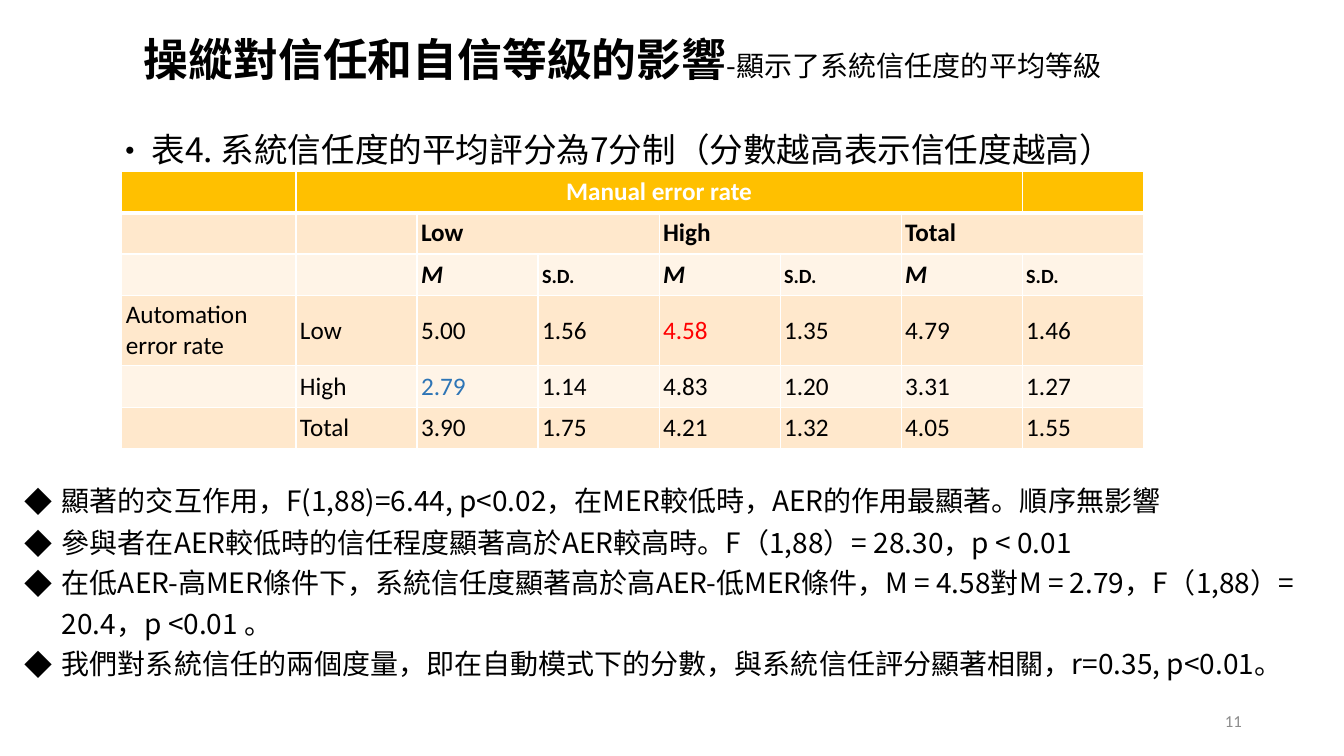
from lxml import etree
from pptx import Presentation
from pptx.dml.color import RGBColor
from pptx.enum.text import MSO_ANCHOR, MSO_AUTO_SIZE, PP_ALIGN
from pptx.oxml.ns import qn
from pptx.util import Cm, Pt

MIDDLE, BOTTOM = MSO_ANCHOR.MIDDLE, MSO_ANCHOR.BOTTOM
LEFT, CENTER, RIGHT = PP_ALIGN.LEFT, PP_ALIGN.CENTER, PP_ALIGN.RIGHT
NO_AUTOFIT = MSO_AUTO_SIZE.NONE

CJK_FONT, TABLE_FONT = "Noto Sans CJK SC", "Calibri"
COLORS = {
    "text": "000000", "white": "FFFFFF", "header": "FFC000",
    "band_dark": "FFE8CC", "band_light": "FFF4E7",
    "highest": "FF0000", "lowest": "2E75B6", "number": "8C8C8C",
}

TITLE = "操縱對信任和自信等級的影響"
TITLE_DETAIL = "-顯示了系統信任度的平均等級"
CAPTION = "表4. 系統信任度的平均評分為7分制（分數越高表示信任度越高）"
PAGE_NUMBER = "11"
FINDINGS = [  # text, line spacing
    ("顯著的交互作用，F(1,88)=6.44, p<0.02，在MER較低時，AER的作用最顯著。順序無影響", 1.2),
    ("參與者在AER較低時的信任程度顯著高於AER較高時。F（1,88）= 28.30，p < 0.01", 1.25),
    ("在低AER-高MER條件下，系統信任度顯著高於高AER-低MER條件，"
     "M = 4.58對M = 2.79，F（1,88）= 20.4，p <0.01 。", 1.2),
    ("我們對系統信任的兩個度量，即在自動模式下的分數，與系統信任評分顯著相關，r=0.35, p<0.01。", 1.2),
]
RATINGS = [
    ["", "Manual error rate", "", "", "", "", "", ""],
    ["", "", "Low", "", "High", "", "Total", ""],
    ["", "", "M", "s.d.", "M", "s.d.", "M", "s.d."],
    ["Automation error rate", "Low", "5.00", "1.56", "4.58", "1.35", "4.79", "1.46"],
    ["", "High", "2.79", "1.14", "4.83", "1.20", "3.31", "1.27"],
    ["", "Total", "3.90", "1.75", "4.21", "1.32", "4.05", "1.55"],
]
MERGES = [(0, 1, 6), (1, 2, 3), (1, 4, 5), (1, 6, 7)]  # row, first column, last column
HIGHLIGHTS = {"4.58": "highest", "2.79": "lowest"}
HEADING_ROWS = 3

COLUMN_WIDTHS = [Cm(4.39)] + [Cm(3.05)] * 7
ROW_HEIGHTS = [Cm(1.04)] * 3 + [Cm(1.78)] + [Cm(1.04)] * 2
CELL_MARGIN = Cm(0.1)
BULLET_INDENT = Cm(0.95)


def add_run(paragraph, text, size, font=CJK_FONT, color="text", bold=False):
    run = paragraph.add_run()
    run.text = text
    run.font.size = Pt(size)
    run.font.bold = bold
    run.font.name = font
    run.font.color.rgb = RGBColor.from_string(COLORS[color])
    etree.SubElement(run.font._element, qn("a:ea"), typeface=font)
    return run


def add_text_frame(left, top, width, height):
    frame = slide.shapes.add_textbox(Cm(left), Cm(top), Cm(width), Cm(height)).text_frame
    frame.word_wrap = True
    return frame


def set_bullet(paragraph, symbol):
    properties = paragraph._p.get_or_add_pPr()
    properties.set("marL", str(BULLET_INDENT))
    properties.set("indent", str(-BULLET_INDENT))
    etree.SubElement(properties, qn("a:buFont"), typeface=CJK_FONT)
    etree.SubElement(properties, qn("a:buChar"), char=symbol)


def set_borders(cell, bottom_width):
    properties = cell._tc.get_or_add_tcPr()
    for side, width in (("L", 1), ("R", 1), ("T", 1), ("B", bottom_width)):
        line = etree.SubElement(properties, qn(f"a:ln{side}"), w=str(Pt(width)))
        fill = etree.SubElement(line, qn("a:solidFill"))
        etree.SubElement(fill, qn("a:srgbClr"), val=COLORS["white"])


def format_cell(cell, row, text):
    is_header = row == 0
    set_borders(cell, 3 if is_header else 1)
    band = "header" if is_header else "band_dark" if row % 2 else "band_light"
    cell.fill.solid()
    cell.fill.fore_color.rgb = RGBColor.from_string(COLORS[band])
    cell.margin_left = cell.margin_right = CELL_MARGIN
    cell.margin_top = cell.margin_bottom = CELL_MARGIN
    cell.vertical_anchor = MIDDLE
    if not text:
        return
    paragraph = cell.text_frame.paragraphs[0]
    paragraph.alignment = CENTER if is_header else LEFT
    color = "white" if is_header else HIGHLIGHTS.get(text, "text")
    run = add_run(paragraph, text, 18, TABLE_FONT, color, bold=row < HEADING_ROWS)
    if text == "M":
        run.font.italic = True
    elif text == "s.d.":
        run.font._element.set("cap", "small")


presentation = Presentation()
presentation.slide_width, presentation.slide_height = Cm(33.87), Cm(19.05)
slide = presentation.slides.add_slide(presentation.slide_layouts[5])

title = slide.shapes.title
title.left, title.top, title.width, title.height = Cm(0.69), Cm(0.56), Cm(30), Cm(1.75)
title.text_frame.auto_size = NO_AUTOFIT
title.text_frame.vertical_anchor = BOTTOM
heading = title.text_frame.paragraphs[0]
heading.alignment = CENTER
heading.line_spacing = 0.9
add_run(heading, TITLE, 32, bold=True)
add_run(heading, TITLE_DETAIL, 20)

caption = add_text_frame(2.62, 2.92, 30.61, 1.4).paragraphs[0]
caption.line_spacing = 1.2
caption.space_before = Pt(10)
set_bullet(caption, "•")
add_run(caption, CAPTION, 24)

number_frame = add_text_frame(23.93, 17.65, 7.62, 1.02)
number_frame.vertical_anchor = MIDDLE
number_frame.paragraphs[0].alignment = RIGHT
add_run(number_frame.paragraphs[0], PAGE_NUMBER, 12, TABLE_FONT, "number")

table = slide.shapes.add_table(
    len(RATINGS), len(COLUMN_WIDTHS), Cm(3.07), Cm(4.32),
    sum(COLUMN_WIDTHS), sum(ROW_HEIGHTS)).table
for column, width in zip(table.columns, COLUMN_WIDTHS):
    column.width = width
for row, height in zip(table.rows, ROW_HEIGHTS):
    row.height = height
for r, ratings in enumerate(RATINGS):
    for c, rating in enumerate(ratings):
        format_cell(table.cell(r, c), r, rating)
for r, first, last in MERGES:
    table.cell(r, first).merge(table.cell(r, last))

findings_frame = add_text_frame(0.36, 11.89, 33.53, 5.44)
for i, (finding, spacing) in enumerate(FINDINGS):
    paragraph = findings_frame.add_paragraph() if i else findings_frame.paragraphs[0]
    paragraph.line_spacing = spacing
    set_bullet(paragraph, "◆")
    add_run(paragraph, finding, 20)

presentation.save("out.pptx")
